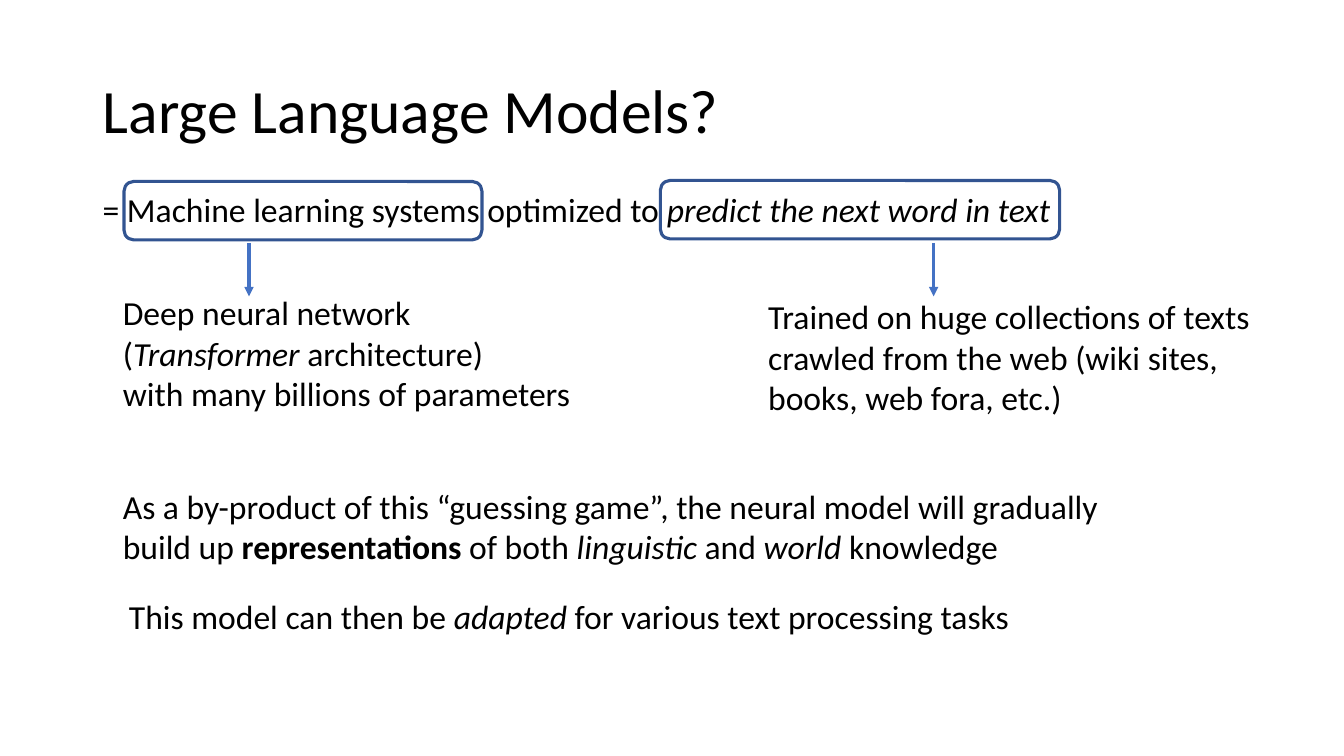
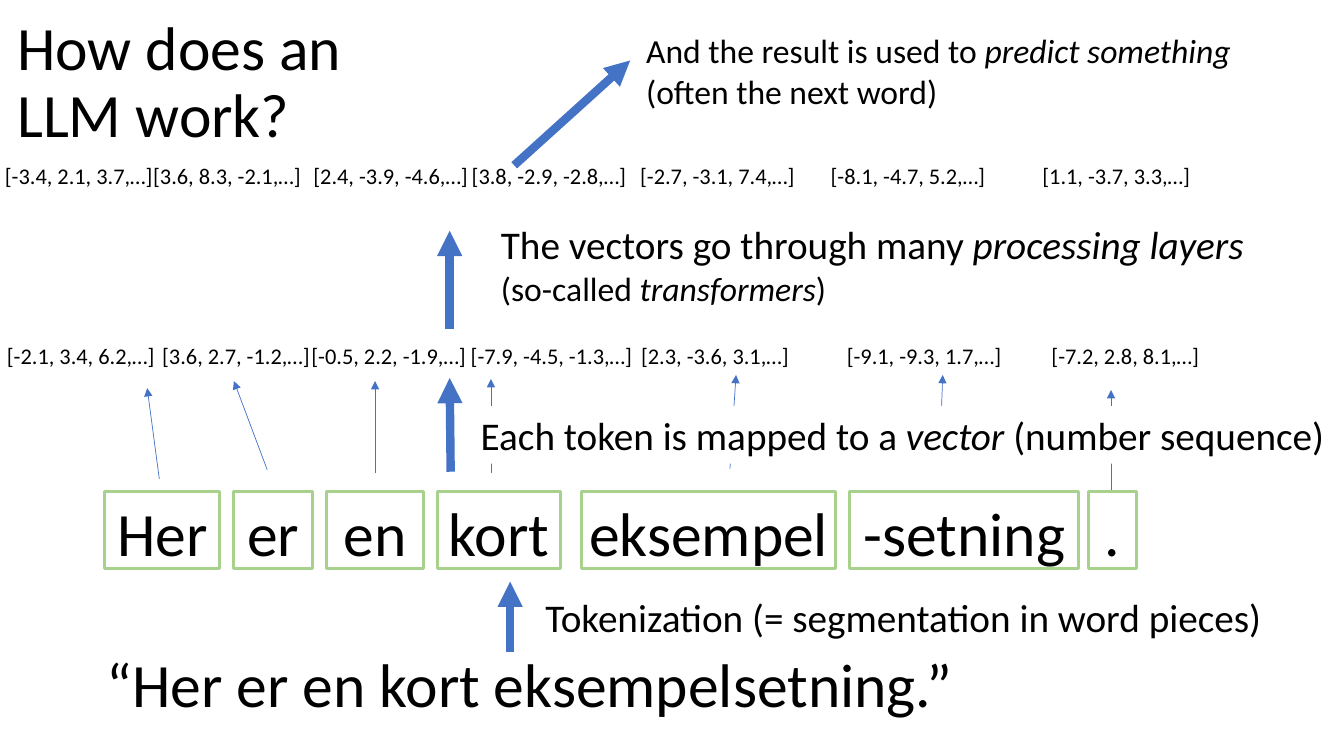
from lxml import etree
from pptx import Presentation
from pptx.dml.color import RGBColor
from pptx.enum.shapes import MSO_CONNECTOR, MSO_SHAPE
from pptx.enum.text import MSO_ANCHOR, MSO_AUTO_SIZE, PP_ALIGN
from pptx.oxml.ns import qn
from pptx.util import Inches, Pt

STRAIGHT = MSO_CONNECTOR.STRAIGHT
RECTANGLE, ROUNDED = MSO_SHAPE.RECTANGLE, MSO_SHAPE.ROUNDED_RECTANGLE
TOP, MIDDLE = MSO_ANCHOR.TOP, MSO_ANCHOR.MIDDLE
LEFT, CENTER = PP_ALIGN.LEFT, PP_ALIGN.CENTER
FIXED, GROW = MSO_AUTO_SIZE.NONE, MSO_AUTO_SIZE.SHAPE_TO_FIT_TEXT

BLACK = RGBColor(0x00, 0x00, 0x00)
WHITE = RGBColor(0xFF, 0xFF, 0xFF)
BLUE = RGBColor(0x44, 0x72, 0xC4)
DARK_BLUE = RGBColor(0x32, 0x54, 0x91)
GREEN = RGBColor(0xA9, 0xD1, 0x8E)

FONT = "Calibri"
TITLE_ONLY = 5
TITLE_SIZE, LABEL_SIZE, BODY_SIZE, VECTOR_SIZE = 44, 28, 24, 16
THICK, MEDIUM, THIN = 6, 2.25, 0.5
ITALIC = {"italic": True}
BOLD = {"bold": True}
SMALL = {"size": Pt(BODY_SIZE)}

TOKENS = [("Her", 0, 1.14), ("er", 1.28, 0.78), ("en", 2.2, 0.96),
          ("kort", 3.3, 1.22), ("eksempel", 4.73, 2.52),
          ("-setning", 7.39, 2.27), (".", 9.76, 0.47)]
INPUT_VECTORS = [("[-2.1, 3.4, 6.2,…]", -0.03), ("[3.6, 2.7, -1.2,…]", 1.51),
                 ("[-0.5, 2.2, -1.9,…]", 2.99), ("[-7.9, -4.5, -1.3,…]", 4.57),
                 ("[2.3, -3.6, 3.1,…]", 6.26), ("[-9.1, -9.3, 1.7,…]", 8.3),
                 ("[-7.2, 2.8, 8.1,…]", 10.33)]
OUTPUT_VECTORS = [("[-3.4, 2.1, 3.7,…]", -0.05), ("[3.6, 8.3, -2.1,…]", 1.42),
                  ("[2.4, -3.9, -4.6,…]", 3.01), ("[3.8, -2.9, -2.8,…]", 4.58),
                  ("[-2.7, -3.1, 7.4,…]", 6.25), ("[-8.1, -4.7, 5.2,…]", 8.14),
                  ("[1.1, -3.7, 3.3,…]", 10.24)]
TOKEN_ARROWS = [(1.58, 4.75, 1.46, 3.85), (2.65, 4.66, 2.32, 3.78),
                (3.72, 4.69, 3.72, 3.78), (4.87, 4.69, 4.87, 3.76),
                (7.24, 4.65, 7.3, 3.72), (9.32, 4.57, 9.35, 3.72),
                (11.02, 4.86, 11.02, 3.87)]


def write(frame, paragraphs, size, align=LEFT, anchor=TOP, auto_size=GROW):
    settings = {"word_wrap": True, "auto_size": auto_size, "vertical_anchor": anchor}
    for name, value in settings.items():
        setattr(frame, name, value)
    for index, spans in enumerate(paragraphs):
        para = frame.paragraphs[0] if index == 0 else frame.add_paragraph()
        para.alignment = align
        for text, *formats in spans:
            span = para.add_run()
            span.text = text
            span.font.color.rgb = BLACK
            values = {"name": FONT, "size": Pt(size)}
            for extra in formats:
                values.update(extra)
            for name, value in values.items():
                setattr(span.font, name, value)


def add_title(page, text, box):
    title = page.shapes.title
    for name, value in zip(("left", "top", "width", "height"), box):
        setattr(title, name, Inches(value))
    write(title.text_frame, [[(text,)]], TITLE_SIZE, anchor=MIDDLE, auto_size=FIXED)
    title.text_frame.paragraphs[0].line_spacing = 0.9


def add_text(page, box, paragraphs, size=BODY_SIZE):
    text_box = page.shapes.add_textbox(*map(Inches, box))
    write(text_box.text_frame, paragraphs, size)


def add_box(page, kind, box, line=None, fill=None):
    shape = page.shapes.add_shape(kind, *map(Inches, box))
    shape.shadow.inherit = False
    if fill is None:
        shape.fill.background()
    else:
        shape.fill.solid()
        shape.fill.fore_color.rgb = fill
    if line is None:
        shape.line.fill.background()
    else:
        shape.line.color.rgb = line
        shape.line.width = Pt(MEDIUM)
    return shape


def add_arrow(page, ends, weight):
    arrow = page.shapes.add_connector(STRAIGHT, *map(Inches, ends))
    arrow.line.color.rgb = BLUE
    arrow.line.width = Pt(weight)
    outline = arrow.line._get_or_add_ln()
    etree.SubElement(outline, qn("a:tailEnd"), type="triangle")
    etree.SubElement(arrow._element.spPr, qn("a:effectLst"))


def add_label(page, box, paragraphs):
    label = add_box(page, RECTANGLE, box, fill=WHITE)
    write(label.text_frame, paragraphs, LABEL_SIZE)


def add_callout(page, frame_box, arrow_left, note_left, note_top, paragraphs):
    left, top, width, height = frame_box
    add_arrow(page, (left + arrow_left, 2.41, left + arrow_left, 2.94), MEDIUM)
    add_box(page, ROUNDED, frame_box, line=DARK_BLUE)
    add_text(page, (left + note_left, top + note_top, 4.98, 1.31), paragraphs)


def add_vectors(page, top, vectors):
    for text, left in vectors:
        add_text(page, (left, top, 2.09, 0.37), [[(text,)]], VECTOR_SIZE)


def add_tokens(page, left, top, height):
    for text, offset, width in TOKENS:
        token = add_box(page, RECTANGLE, (left + offset, top, width, height), line=GREEN)
        frame = token.text_frame
        margins = {"margin_left": 0, "margin_right": 0,
                   "margin_top": Inches(0.04), "margin_bottom": 0}
        for name, value in margins.items():
            setattr(frame, name, value)
        write(frame, [[(text,)]], TITLE_SIZE, CENTER, MIDDLE, FIXED)
        frame.word_wrap = False


def build_definition(page):
    add_title(page, "Large Language Models?", (0.92, 0.4, 11.5, 1.45))
    add_text(page, (0.92, 1.83, 10.64, 0.5), [[
        ("= Machine learning systems optimized to ",),
        ("predict the next word in text", ITALIC)]])
    add_callout(page, (1.23, 1.8, 3.55, 0.58), 1.24, -0.11, 1.05, [
        [("Deep neural network",)],
        [("(",), ("Transformer", ITALIC), (" architecture)",)],
        [("with many billions of parameters",)]])
    add_callout(page, (6.55, 1.79, 3.96, 0.58), 2.71, 0.97, 1.1, [[
        ("Trained on huge collections of texts crawled from the web "
         "(wiki sites, books, web fora, etc.)",)]])
    add_text(page, (1.12, 4.77, 10.5, 0.91), [[
        ("As a by-product of this “guessing game”, the neural model "
         "will gradually build up ",),
        ("representations", BOLD), (" of both ",), ("linguistic", ITALIC),
        (" and ",), ("world", ITALIC), (" knowledge",)]])
    add_text(page, (1.18, 5.86, 11.32, 0.5), [[
        ("This model can then be ",), ("adapted", ITALIC),
        (" for various text processing tasks",)]])


def add_tokenization(page):
    add_text(page, (0.96, 6.36, 10.87, 0.84),
             [[("“Her er en kort eksempelsetning.”",)]], TITLE_SIZE)
    add_arrow(page, (5.06, 6.47, 5.06, 5.77), THICK)
    add_text(page, (5.31, 5.84, 8.5, 0.57),
             [[("Tokenization (= segmentation in word pieces)",)]], LABEL_SIZE)
    add_tokens(page, 1.04, 4.88, 0.76)


def add_embedding(page):
    add_arrow(page, (4.47, 4.68, 4.46, 3.75), THICK)
    add_vectors(page, 3.35, INPUT_VECTORS)
    for ends in TOKEN_ARROWS:
        add_arrow(page, ends, THIN)
    add_label(page, (4.67, 4.03, 8.64, 0.57), [[
        ("Each token is mapped to a ",), ("vector", ITALIC), (" (number sequence)",)]])


def add_processing(page):
    add_arrow(page, (4.46, 3.26, 4.46, 2.29), THICK)
    add_label(page, (4.87, 2.14, 7.97, 0.98), [
        [("The vectors go through many ",), ("processing layers", ITALIC)],
        [("(so-called ", SMALL), ("transformers", SMALL, ITALIC), (")", SMALL)]])
    add_vectors(page, 1.56, OUTPUT_VECTORS)


def add_prediction(page):
    add_arrow(page, (5.1, 1.64, 6.25, 0.6), THICK)
    add_text(page, (6.31, 0.25, 6.61, 0.91), [[
        ("And the result is used to ",), ("predict something ", ITALIC),
        ("(often the next word)",)]])


def build_pipeline(page):
    add_title(page, "How does an LLM work?", (0.07, 0.11, 4.22, 1.45))
    for add_stage in (add_tokenization, add_embedding, add_processing, add_prediction):
        add_stage(page)


def main():
    deck = Presentation()
    deck.slide_width = Inches(13.33)
    deck.slide_height = Inches(7.5)
    for build in (build_definition, build_pipeline):
        build(deck.slides.add_slide(deck.slide_layouts[TITLE_ONLY]))
    deck.save("out.pptx")


if __name__ == "__main__":
    main()
